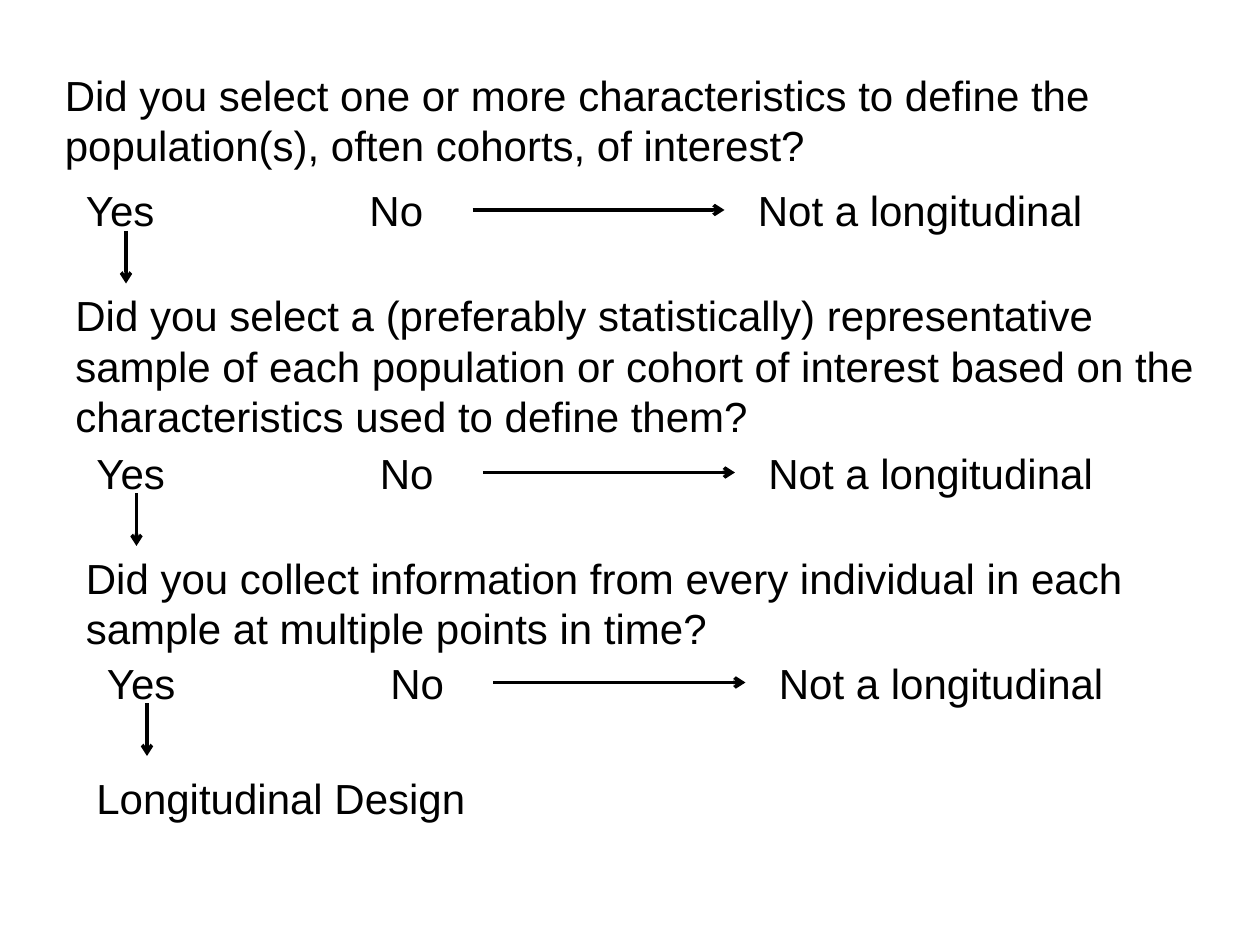
from lxml.etree import SubElement
from pptx import Presentation
from pptx.dml.color import RGBColor
from pptx.enum.shapes import MSO_CONNECTOR as Connector
from pptx.enum.text import MSO_AUTO_SIZE as AutoSize
from pptx.oxml.ns import qn
from pptx.util import Inches, Pt

COLORS = {"ink": "000000", "paper": "FFFFFF"}
FONT = "Arial"

# Grid of 120 columns by 90 rows
WIDTH, HEIGHT = Inches(10), Inches(7.5)
COLUMNS, ROWS = 120, 90
LINE_ROWS = 6.1
QUESTION_COLUMNS = 109.2

# Each step: left column, top row, question rows, answer row, verdict columns, paragraphs
STEPS = [
    (5, 6, 10.9, 17, 41, [
        "Did you select one or more characteristics to define the "
        "population(s), often cohorts, of interest?"]),
    (6, 27, 15.7, 42, 38, [
        "Did you select a (preferably statistically) representative",
        "sample of each population or cohort of interest based on the "
        "characteristics used to define them?"]),
    (7, 52, 10.9, 62, 37, [
        "Did you collect information from every individual in each "
        "sample at multiple points in time?"]),
]


def across(column):
    return round(WIDTH * column / COLUMNS)


def down(row):
    return round(HEIGHT * row / ROWS)


def add_text(page, text, *, left, top, width, height=LINE_ROWS, wrap=True,
             size=24, color="ink"):
    """Place text, one paragraph per line, in a box given in grid units."""
    box = page.shapes.add_textbox(across(left), down(top), across(width), down(height))
    frame = box.text_frame
    frame.word_wrap = wrap
    frame.auto_size = AutoSize.SHAPE_TO_FIT_TEXT
    frame.text = text
    for para in frame.paragraphs:
        for span in para.runs:
            span.font.name = FONT
            span.font.size = Pt(size)
            span.font.color.rgb = RGBColor.from_string(COLORS[color])


def add_arrow(page, start, end):
    """Draw an arrow between two (column, row) points."""
    arrow = page.shapes.add_connector(
        Connector.STRAIGHT, across(start[0]), down(start[1]), across(end[0]), down(end[1]))
    arrow.line.width = Pt(2)
    arrow.line.color.rgb = RGBColor.from_string(COLORS["ink"])
    SubElement(arrow.line._get_or_add_ln(), qn("a:tailEnd"), type="arrow")
    SubElement(arrow._element.spPr, qn("a:effectLst"))


def add_step(page, left, top, question_rows, answer_row, verdict_columns, paragraphs):
    """Place a question with its Yes and No branches."""
    # Question
    add_text(page, "\n".join(paragraphs), left=left, top=top,
             width=QUESTION_COLUMNS, height=question_rows)

    # Answers
    add_text(page, "Yes", left=left + 2, top=answer_row, width=9, wrap=False)
    add_text(page, "No", left=left + 29, top=answer_row, width=7.6, wrap=False)
    add_text(page, "Not a longitudinal", left=left + 66, top=answer_row,
             width=verdict_columns)

    # Arrows to the verdict and to the next step
    add_arrow(page, (left + 40, answer_row + 3), (left + 64, answer_row + 3))
    add_arrow(page, (left + 7, answer_row + 5), (left + 7, answer_row + 10))


def build_flow(page):
    for step in STEPS:
        add_step(page, *step)
    # Outcome
    add_text(page, "Longitudinal Design", left=8, top=73, width=37.9, wrap=False)


def main():
    deck = Presentation()
    deck.slide_width, deck.slide_height = WIDTH, HEIGHT
    page = deck.slides.add_slide(deck.slide_layouts[6])
    page.background.fill.solid()
    page.background.fill.fore_color.rgb = RGBColor.from_string(COLORS["paper"])
    build_flow(page)
    deck.save("out.pptx")


if __name__ == "__main__":
    main()
